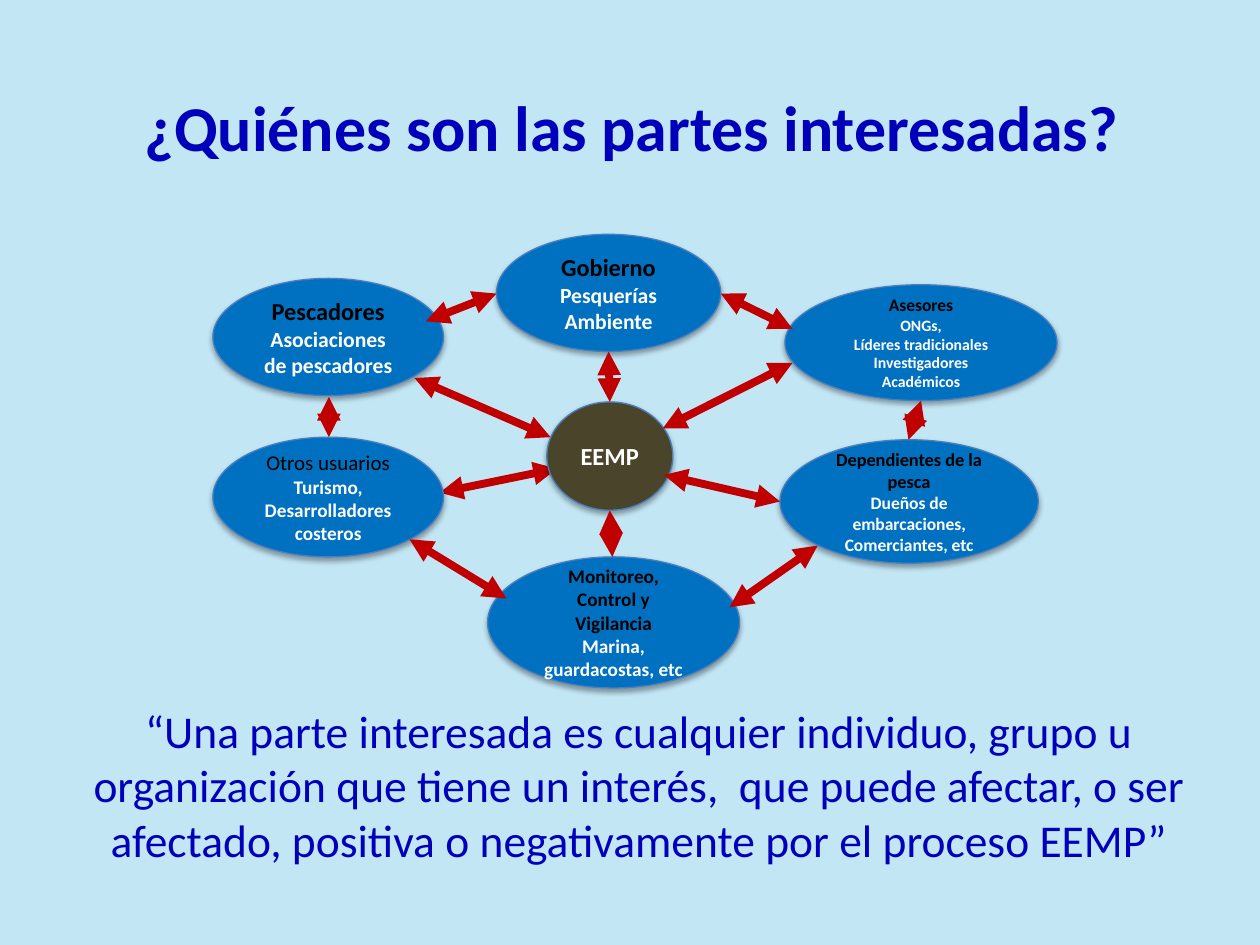
"""Build a slide showing the stakeholders around the EEMP process."""
from dataclasses import dataclass

from lxml import etree
from pptx import Presentation
from pptx.dml.color import RGBColor
from pptx.enum.shapes import MSO_CONNECTOR, MSO_SHAPE
from pptx.enum.text import MSO_ANCHOR, PP_ALIGN
from pptx.oxml.ns import qn
from pptx.util import Inches, Pt

ELLIPSE = MSO_SHAPE.OVAL
RECTANGLE = MSO_SHAPE.RECTANGLE
STRAIGHT = MSO_CONNECTOR.STRAIGHT
CENTER = PP_ALIGN.CENTER
MIDDLE = MSO_ANCHOR.MIDDLE
TOP = MSO_ANCHOR.TOP


@dataclass(frozen=True)
class Theme:
    font: str = "Calibri"
    background: str = "C3E6F5"
    heading: str = "0000BA"
    group: str = "0070C0"
    center: str = "4A452A"
    outline: str = "4B7EBC"
    arrow: str = "C00000"
    dark: str = "000000"
    light: str = "FFFFFF"
    title_size: float = 36.5
    title_end_size: float = 40.8
    quote_size: float = 26
    center_size: float = 14
    outline_width: float = 0.75
    arrow_width: float = 4.5


@dataclass(frozen=True)
class Run:
    text: str
    size: float
    color: str
    bold: bool = True


@dataclass(frozen=True)
class Stakeholder:
    box: tuple[float, float, float, float]
    name: str
    name_size: float
    members: tuple[str, ...]
    member_size: float
    name_bold: bool = True


@dataclass(frozen=True)
class Arrow:
    start: tuple[float, float]
    end: tuple[float, float]


THEME = Theme()

STAKEHOLDERS = (
    Stakeholder((1.69, 2.21, 1.83, 0.93), "Pescadores", 13.9,
                ("Asociaciones de pescadores",), 12.4),
    Stakeholder((3.94, 1.86, 1.78, 0.93), "Gobierno", 13.9,
                ("Pesquerías", "Ambiente"), 12.4),
    Stakeholder((6.19, 3.49, 2.05, 0.98), "Dependientes de la pesca", 10.5,
                ("Dueños de embarcaciones,", "Comerciantes, etc"), 10),
    Stakeholder((3.87, 4.42, 2, 1.04), "Monitoreo, Control y Vigilancia", 11,
                ("Marina, guardacostas, etc",), 11),
    Stakeholder((6.23, 2.26, 2.16, 0.92), "Asesores", 10,
                ("ONGs,", "Líderes tradicionales", "Investigadores", "Académicos"), 9),
    Stakeholder((1.69, 3.47, 1.83, 0.95), "Otros usuarios", 12,
                ("Turismo, Desarrolladores costeros",), 11, name_bold=False),
)

BACK_ARROW = Arrow((4.42, 3.72), (3.49, 3.91))
FRONT_ARROWS = (
    Arrow((6.19, 3.98), (5.27, 3.77)),
    Arrow((6.29, 2.88), (5.26, 3.4)),
    Arrow((4.83, 2.79), (4.84, 3.19)),
    Arrow((4.37, 3.47), (3.29, 3)),
    Arrow((4.86, 4.42), (4.84, 4.05)),
    Arrow((6.49, 4.33), (5.79, 4.82)),
    Arrow((4.02, 4.75), (3.25, 4.28)),
    Arrow((7.31, 3.18), (7.21, 3.49)),
    Arrow((3.94, 2.33), (3.38, 2.55)),
    Arrow((5.72, 2.33), (6.29, 2.61)),
    Arrow((2.61, 3.15), (2.61, 3.47)),
)


def rgb(color: str) -> RGBColor:
    """Turn a hex string into a colour."""
    return RGBColor.from_string(color)


def write(tf, paragraphs: list[list[Run]], anchor) -> None:
    """Fill a text frame with centred paragraphs."""
    tf.word_wrap = True
    tf.vertical_anchor = anchor
    for i, runs in enumerate(paragraphs):
        p = tf.add_paragraph() if i else tf.paragraphs[0]
        p.alignment = CENTER
        for run in runs:
            r = p.add_run()
            r.text = run.text
            r.font.name = THEME.font
            r.font.size = Pt(run.size)
            r.font.bold = run.bold
            r.font.color.rgb = rgb(run.color)


def add_text(s, box: tuple[float, ...], runs: list[Run]) -> None:
    """Add a text box holding one paragraph."""
    sp = s.shapes.add_textbox(*map(Inches, box))
    write(sp.text_frame, [runs], TOP)


def add_shadow(sp) -> None:
    """Give a shape a soft shadow below it."""
    sp.shadow.inherit = False
    effects = sp._element.spPr.find(qn("a:effectLst"))
    shadow = etree.SubElement(effects, qn("a:outerShdw"), blurRad=str(Pt(3.1)),
                              dist=str(Pt(1.8)), dir="5400000", rotWithShape="0")
    color = etree.SubElement(shadow, qn("a:srgbClr"), val=THEME.dark)
    etree.SubElement(color, qn("a:alpha"), val="35000")


def add_ellipse(s, box: tuple[float, ...], fill: str, paragraphs: list[list[Run]]) -> None:
    """Add a shadowed ellipse with text."""
    sp = s.shapes.add_shape(ELLIPSE, *map(Inches, box))
    sp.fill.solid()
    sp.fill.fore_color.rgb = rgb(fill)
    sp.line.color.rgb = rgb(THEME.outline)
    sp.line.width = Pt(THEME.outline_width)
    add_shadow(sp)
    write(sp.text_frame, paragraphs, MIDDLE)


def add_stakeholder(s, item: Stakeholder) -> None:
    """Add one stakeholder group with its name and members."""
    name = Run(item.name, item.name_size, THEME.dark, item.name_bold)
    members = [[Run(text, item.member_size, THEME.light)] for text in item.members]
    add_ellipse(s, item.box, THEME.group, [[name], *members])


def add_arrow(s, arrow: Arrow) -> None:
    """Add a double-headed arrow."""
    sp = s.shapes.add_connector(STRAIGHT, *map(Inches, arrow.start + arrow.end))
    sp.line.color.rgb = rgb(THEME.arrow)
    sp.line.width = Pt(THEME.arrow_width)
    ln = sp.line._get_or_add_ln()
    for end in ("a:headEnd", "a:tailEnd"):
        etree.SubElement(ln, qn(end), type="triangle")
    etree.SubElement(sp._element.spPr, qn("a:effectLst"))


def add_backdrop(s, width: float, height: float) -> None:
    """Cover the slide with the background colour."""
    sp = s.shapes.add_shape(RECTANGLE, 0, 0, Inches(width), Inches(height))
    sp.fill.solid()
    sp.fill.fore_color.rgb = rgb(THEME.background)
    sp.line.fill.background()
    sp.shadow.inherit = False


def main() -> None:
    """Build and save the slide."""
    width, height = 10, 7.5
    prs = Presentation()
    prs.slide_width, prs.slide_height = Inches(width), Inches(height)
    s = prs.slides.add_slide(prs.slide_layouts[6])
    add_backdrop(s, width, height)
    add_text(s, (0.43, 0.59, 9.29, 1.2), [
        Run("¿Quiénes son las partes interesadas?", THEME.title_size, THEME.heading),
        Run(" ", THEME.title_end_size, THEME.heading),
    ])
    add_text(s, (0.54, 5.53, 9.07, 1.9), [
        Run("“Una parte interesada es cualquier individuo, grupo u organización "
            "que tiene un interés,  que puede afectar, o ser afectado, positiva o "
            "negativamente por el proceso EEMP”", THEME.quote_size, THEME.heading, False),
    ])
    add_arrow(s, BACK_ARROW)
    for item in STAKEHOLDERS:
        add_stakeholder(s, item)
    add_ellipse(s, (4.34, 3.19, 1, 0.86), THEME.center,
                [[Run("EEMP", THEME.center_size, THEME.light)]])
    for arrow in FRONT_ARROWS:
        add_arrow(s, arrow)
    prs.save("out.pptx")


if __name__ == "__main__":
    main()
